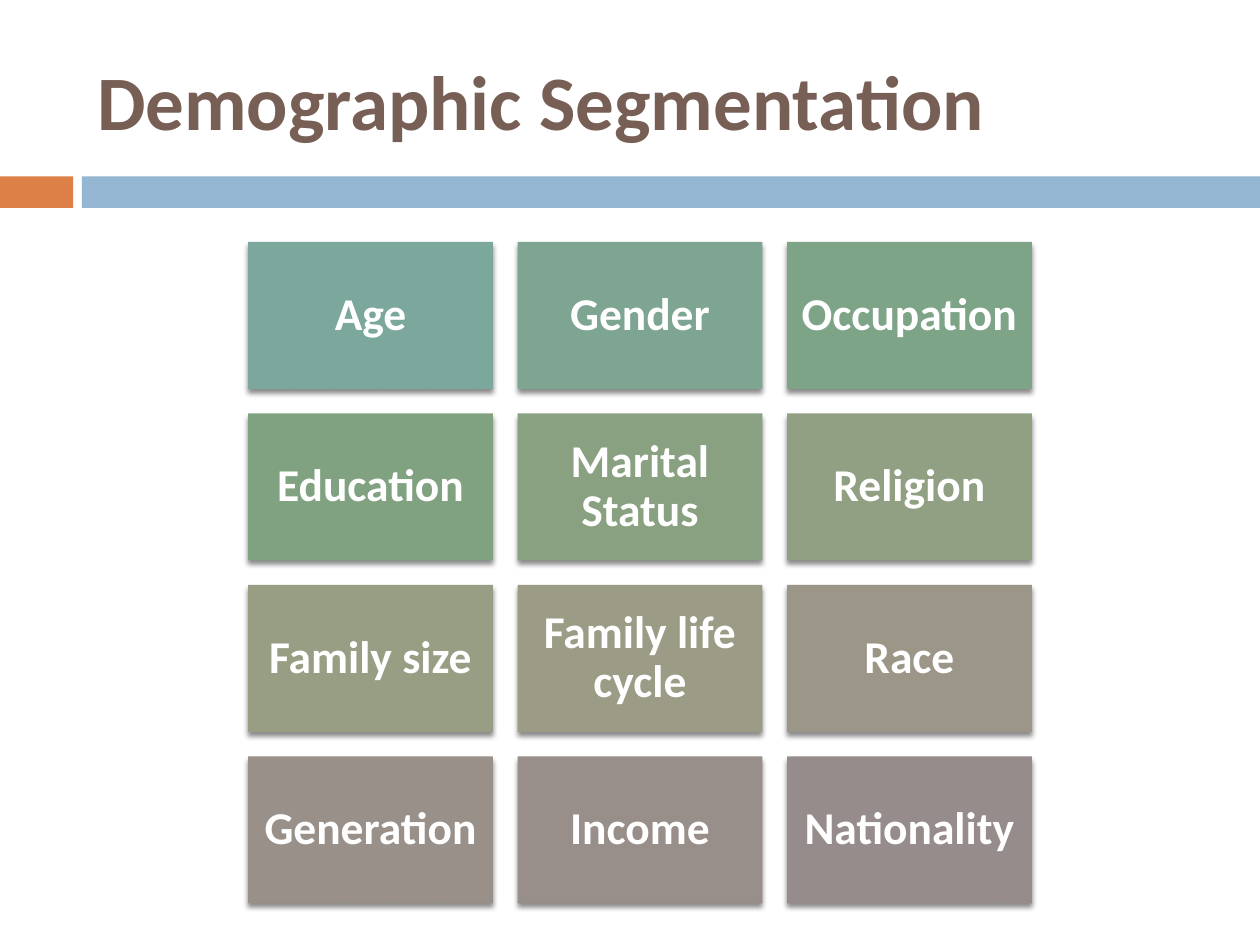
from lxml import etree
from pptx import Presentation
from pptx.dml.color import RGBColor
from pptx.enum import shapes, text
from pptx.oxml import ns
from pptx.util import Inches, Pt

TILES = [
    [("Age", "7BA79D"), ("Gender", "7DA592"), ("Occupation", "7EA488")],
    [("Education", "80A280"), ("Marital Status", "89A181"), ("Religion", "919F83")],
    [("Family size", "979E84"), ("Family life cycle", "9C9C86"), ("Race", "9B9687")],
    [("Generation", "999189"), ("Income", "988E8A"), ("Nationality", "968C8C")],
]
TITLE_FORMAT = {"name": "Calibri", "size": Pt(44), "bold": True}
TILE_FORMAT = {"name": "Calibri", "size": Pt(26), "bold": True}


def color(hex_string):
    return RGBColor.from_string(hex_string)


def write_text(shape, words, font_format, font_color, alignment):
    frame = shape.text_frame
    frame.word_wrap = True
    frame.vertical_anchor = text.MSO_ANCHOR.MIDDLE
    paragraph = frame.paragraphs[0]
    paragraph.alignment = alignment
    run = paragraph.add_run()
    run.text = words
    for name, value in font_format.items():
        setattr(run.font, name, value)
    run.font.color.rgb = color(font_color)
    return frame


def add_rectangle(slide, left, top, width, height, fill):
    shape = slide.shapes.add_shape(
        shapes.MSO_SHAPE.RECTANGLE,
        Inches(left), Inches(top), Inches(width), Inches(height))
    shape.shadow.inherit = False
    shape.fill.solid()
    shape.fill.fore_color.rgb = color(fill)
    shape.line.fill.background()
    return shape


def add_shadow(shape):
    effects = shape._element.spPr.find(ns.qn("a:effectLst"))
    shadow = etree.SubElement(
        effects, ns.qn("a:outerShdw"), blurRad=str(Pt(3)), dist=str(Pt(2.4)),
        dir="5400000", rotWithShape="0")
    shade = etree.SubElement(shadow, ns.qn("a:srgbClr"), val="000000")
    etree.SubElement(shade, ns.qn("a:alpha"), val="45000")


def add_title(slide, left, top, width, height):
    title = slide.shapes.title
    title.left, title.top = Inches(left), Inches(top)
    title.width, title.height = Inches(width), Inches(height)
    write_text(title, "Demographic Segmentation", TITLE_FORMAT, "775F55",
               text.PP_ALIGN.LEFT)


def add_band(slide, left, top, width, height):
    accent_width, gap = 0.58, 0.07
    bar_offset = accent_width + gap
    add_rectangle(slide, left, top, accent_width, height, "DD8047")
    add_rectangle(slide, left + bar_offset, top, width - bar_offset, height, "94B6D2")


def add_tile(slide, left, top, width, height, words, fill):
    tile = add_rectangle(slide, left, top, width, height, fill)
    add_shadow(tile)
    frame = write_text(tile, words, TILE_FORMAT, "FFFFFF", text.PP_ALIGN.CENTER)
    frame.paragraphs[0].line_spacing = 0.9
    for side in ("left", "top", "right", "bottom"):
        setattr(frame, f"margin_{side}", Inches(0.11))


def add_tile_grid(slide, left, top, width, height, gap):
    rows, columns = len(TILES), len(TILES[0])
    tile_width = (width - gap * (columns - 1)) / columns
    tile_height = (height - gap * (rows - 1)) / rows
    for row, tiles in enumerate(TILES):
        for column, (words, fill) in enumerate(tiles):
            add_tile(slide, left + column * (tile_width + gap),
                     top + row * (tile_height + gap),
                     tile_width, tile_height, words, fill)


def main():
    presentation = Presentation()
    presentation.slide_width, presentation.slide_height = Inches(10), Inches(7.5)
    slide = presentation.slides.add_slide(presentation.slide_layouts[5])

    # Title and the band below it
    add_band(slide, 0, 1.4, 10, 0.25)
    add_title(slide, 0.67, 0.25, 8.92, 1.08)

    # Segmentation variables
    add_tile_grid(slide, 1.97, 1.92, 6.22, 5.25, gap=0.195)

    presentation.save("out.pptx")


if __name__ == "__main__":
    main()
